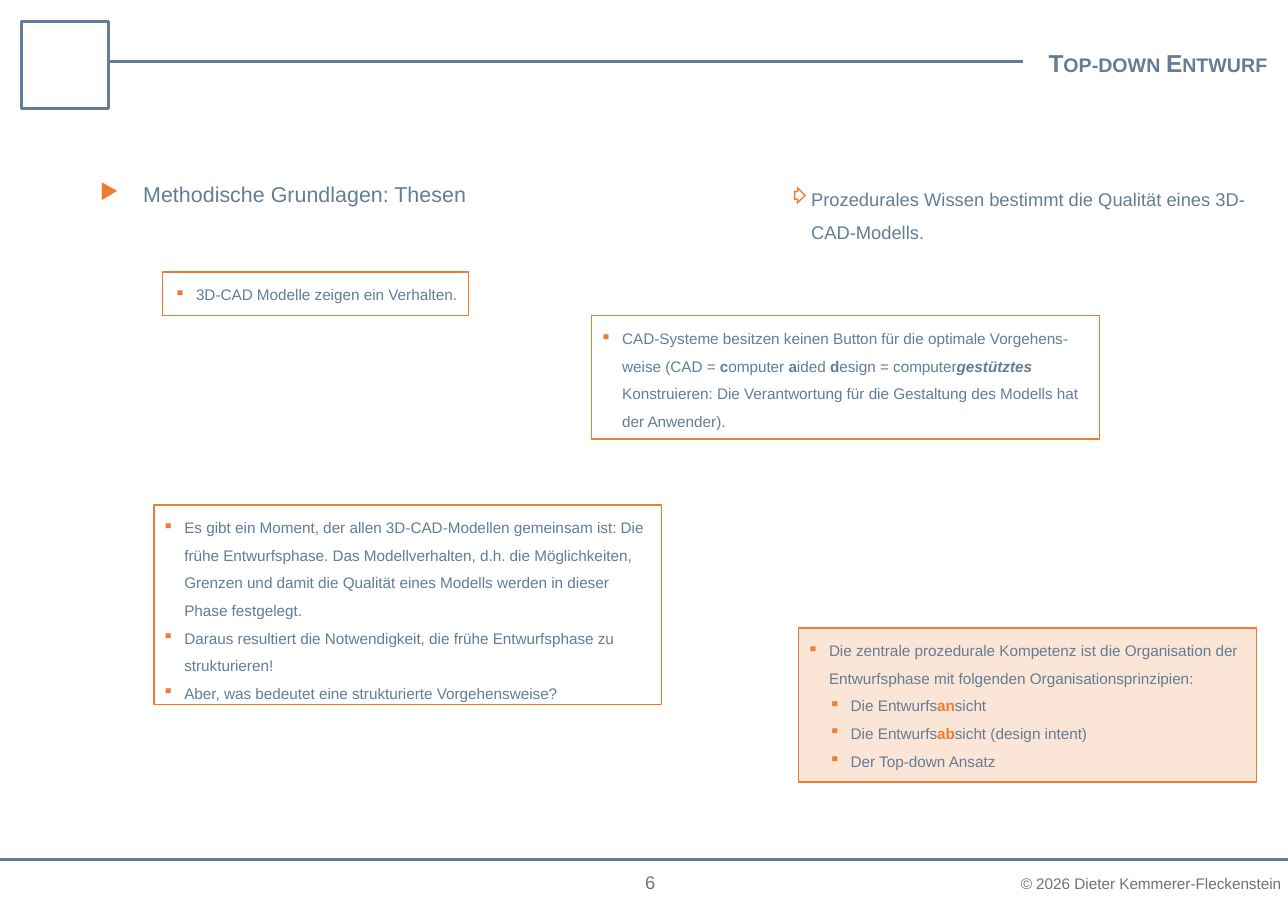
from lxml import etree
from pptx import Presentation
from pptx.dml.color import RGBColor
from pptx.enum import shapes, text
from pptx.oxml import ns
from pptx.util import Pt

WIDE, HIGH = 841.89, 595.28
INK = {"blue": "637D96", "orange": "ED7D31", "peach": "FBE5D6", "gray": "767171"}
LEFT, MID, RIGHT = text.PP_ALIGN.LEFT, text.PP_ALIGN.CENTER, text.PP_ALIGN.RIGHT
STEP = 14.2  # hanging indent of one list level


def tint(name):
    return RGBColor.from_string(INK[name])


def style(para, size, ink="blue", bold=None, align=LEFT):
    para.alignment = align
    font = para.font
    font.name, font.size, font.bold = "Arial", Pt(size), bold
    font.color.rgb = tint(ink)


def bullet(para, mark, left, hang):
    props = para._p.get_or_add_pPr()
    props.set("marL", str(Pt(left)))
    props.set("indent", str(Pt(-hang)))
    color = etree.SubElement(props, ns.qn("a:buClr"))
    etree.SubElement(color, ns.qn("a:srgbClr"), val=INK["orange"])
    etree.SubElement(props, ns.qn("a:buChar"), char=mark)


def setup(frame, inset=(7.2, 3.6), anchor=text.MSO_ANCHOR.TOP):
    frame.word_wrap = True
    frame.auto_size = text.MSO_AUTO_SIZE.NONE
    frame.vertical_anchor = anchor
    frame.margin_left = frame.margin_right = Pt(inset[0])
    frame.margin_top = frame.margin_bottom = Pt(inset[1])


def rule(slide, start, end, y, weight):
    line = slide.shapes.add_connector(
        shapes.MSO_CONNECTOR.STRAIGHT, Pt(start), Pt(y), Pt(end), Pt(y))
    line.line.color.rgb = tint("blue")
    line.line.width = Pt(weight)
    etree.SubElement(line._element.spPr, ns.qn("a:effectLst"))


def header(slide, x, y, width):
    side = 56.7
    badge = slide.shapes.add_shape(
        shapes.MSO_SHAPE.RECTANGLE, Pt(x), Pt(y), Pt(side), Pt(side))
    badge.shadow.inherit = False
    badge.fill.background()
    badge.line.color.rgb = tint("blue")
    badge.line.width = Pt(1.75)
    rule(slide, x + side, 669, y + 26.1, 1.75)

    title = slide.shapes.title
    title.left, title.top = Pt(x + width - 170), Pt(y + 13.9)
    title.width, title.height = Pt(170), Pt(26.6)
    setup(title.text_frame)
    para = title.text_frame.paragraphs[0]
    run = para.add_run()
    run.text = "Top-down Entwurf"
    run._r.get_or_add_rPr().set("cap", "small")
    style(para, 16, bold=True, align=MID)


def footer(slide, y):
    rule(slide, 0, WIDE, y, 2)
    number = slide.shapes.add_textbox(Pt(396.7), Pt(y + 5), Pt(56.7), Pt(20.2))
    setup(number.text_frame, anchor=text.MSO_ANCHOR.MIDDLE)
    number.text_frame.text = "6"
    style(number.text_frame.paragraphs[0], 12, "gray", align=MID)

    left = 660.2
    owner = slide.shapes.add_textbox(Pt(left), Pt(y + 5.8), Pt(WIDE - left), Pt(19.4))
    setup(owner.text_frame)
    owner.text_frame.margin_right = 0
    owner.text_frame.text = "© 2026 Dieter Kemmerer-Fleckenstein"
    style(owner.text_frame.paragraphs[0], 10, "gray")


def panel(slide, box, items, size=10, mark="▪", hang=STEP, space=1.5,
          line="orange", fill=None, align=LEFT):
    """Place a bulleted box; items are (level, runs), runs are (words, flags).

    Flags: b bold, i italic, o orange.
    """
    shape = slide.shapes.add_textbox(*map(Pt, box))
    if line:
        shape.line.color.rgb = tint(line)
        shape.line.width = Pt(1)
    if fill:
        shape.fill.solid()
        shape.fill.fore_color.rgb = tint(fill)
    frame = shape.text_frame
    setup(frame, (5.7, 2.8))
    for index, (level, runs) in enumerate(items):
        para = frame.add_paragraph() if index else frame.paragraphs[0]
        bullet(para, mark, hang * (level + 1), hang)
        para.line_spacing = space
        style(para, size, align=align)
        for words, flags in runs:
            run = para.add_run()
            run.text = words
            if "b" in flags:
                run.font.bold = True
            if "i" in flags:
                run.font.italic = True
            if "o" in flags:
                run.font.color.rgb = tint("orange")


def plain(words, level=0):
    return level, [(words, "")]


def theses(slide):
    panel(slide, (59.6, 115.8, 414, 51), [plain("Methodische Grundlagen: Thesen")],
          size=14, mark="▶", hang=28.3, space=1, line=None)
    panel(slide, (510.3, 113.1, 319.7, 51),
          [plain("Prozedurales Wissen bestimmt die Qualität eines 3D-CAD-Modells.")],
          size=12, mark="⇨", line=None)
    panel(slide, (106.3, 177.8, 200, 28.3),
          [plain("3D-CAD Modelle zeigen ein Verhalten.")], align=MID)
    panel(slide, (386.8, 206.3, 332, 80.5), [(0, [
        ("CAD-Systeme besitzen keinen Button für die optimale Vorgehens-weise (CAD = ", ""),
        ("c", "b"), ("omputer ", ""), ("a", "b"), ("ided ", ""), ("d", "b"),
        ("esign = computer", ""), ("gestütztes", "bi"),
        (" Konstruieren: Die Verantwortung für die Gestaltung des Modells hat "
         "der Anwender).", "")])])
    panel(slide, (100.6, 330, 332, 130.5), [
        plain("Es gibt ein Moment, der allen 3D-CAD-Modellen gemeinsam ist: Die frühe "
              "Entwurfsphase. Das Modellverhalten, d.h. die Möglichkeiten, Grenzen und "
              "damit die Qualität eines Modells werden in dieser Phase festgelegt."),
        plain("Daraus resultiert die Notwendigkeit, die frühe Entwurfsphase zu "
              "strukturieren!"),
        plain("Aber, was bedeutet eine strukturierte Vorgehensweise?")])
    panel(slide, (522, 410.3, 299.5, 100.8), [
        plain("Die zentrale prozedurale Kompetenz ist die Organisation der "
              "Entwurfsphase mit folgenden Organisationsprinzipien:"),
        (1, [("Die Entwurfs", ""), ("an", "bo"), ("sicht", "")]),
        (1, [("Die Entwurfs", ""), ("ab", "bo"), ("sicht (design intent)", "")]),
        plain("Der Top-down Ansatz", 1)], fill="peach")


def main():
    deck = Presentation()
    deck.slide_width, deck.slide_height = Pt(WIDE), Pt(HIGH)
    slide = deck.slides.add_slide(deck.slide_layouts[5])
    header(slide, 14.2, 14.2, WIDE - 14.2)
    footer(slide, 561.6)
    theses(slide)
    deck.save("out.pptx")


if __name__ == "__main__":
    main()
